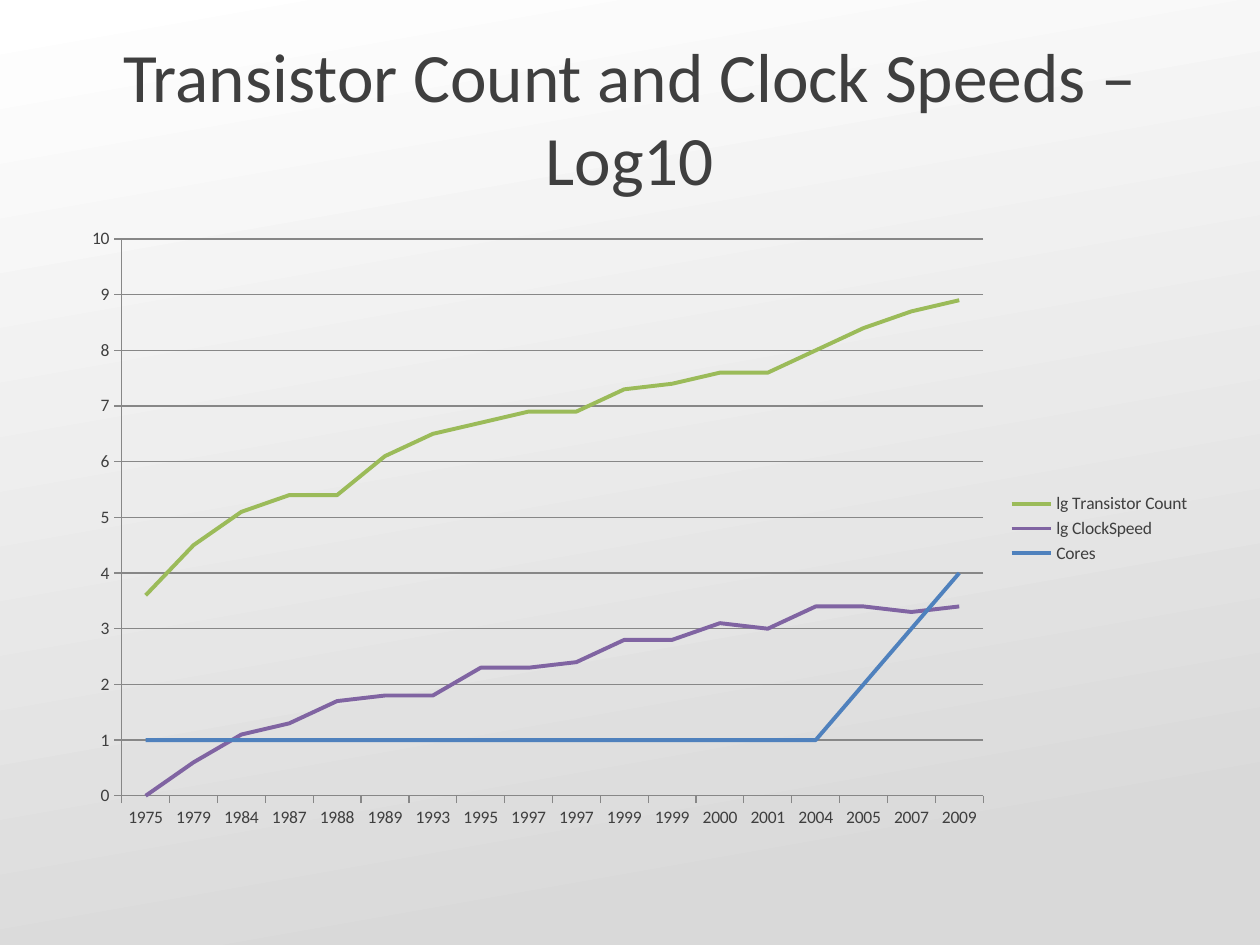
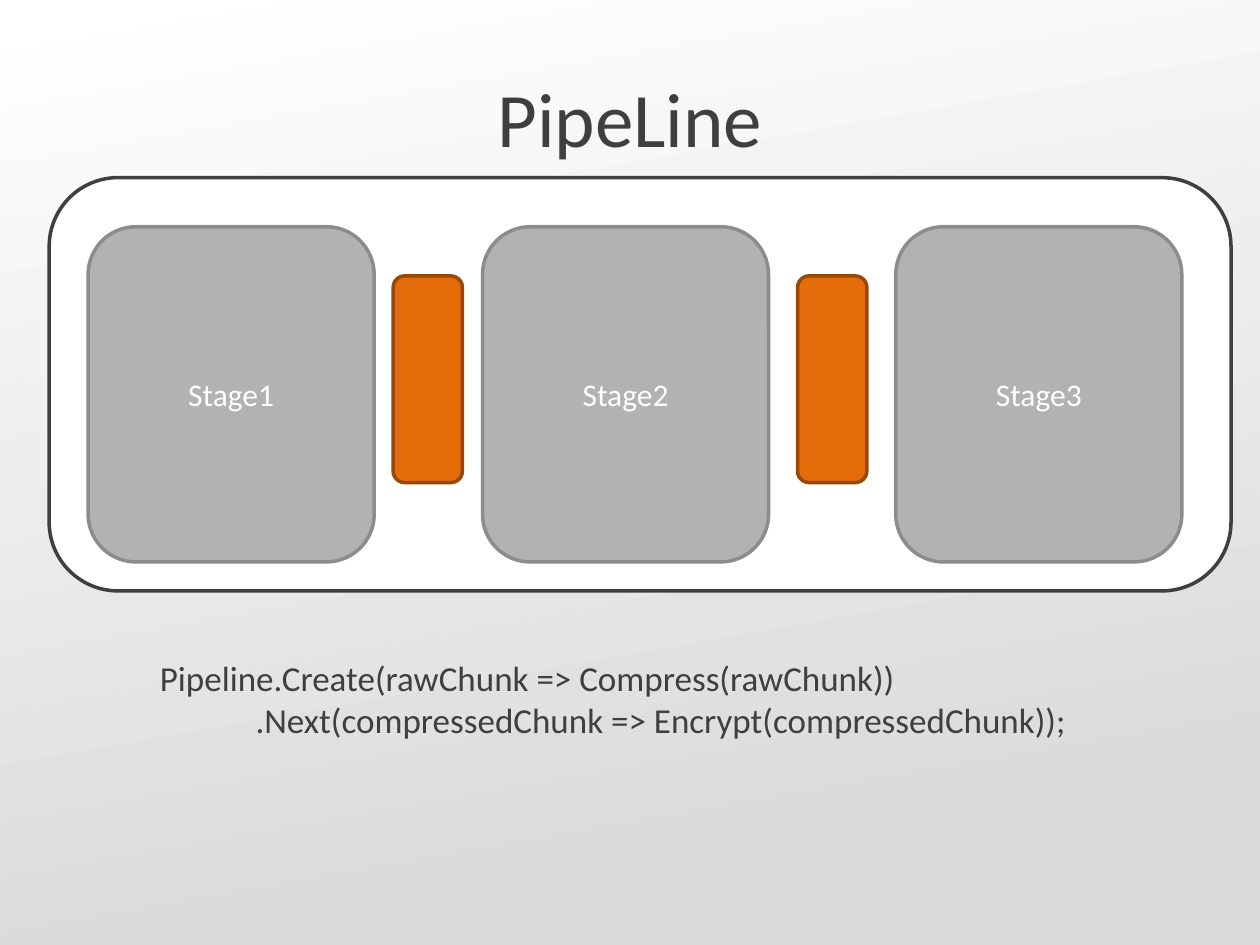
from pptx import Presentation
from pptx.chart.data import CategoryChartData
from pptx.dml.color import RGBColor
from pptx.enum.chart import XL_CHART_TYPE, XL_LEGEND_POSITION, XL_MARKER_STYLE, XL_TICK_MARK
from pptx.enum.shapes import MSO_SHAPE
from pptx.enum.text import MSO_ANCHOR, MSO_AUTO_SIZE, PP_ALIGN
from pptx.util import Inches, Pt

ROUNDED = MSO_SHAPE.ROUNDED_RECTANGLE
CENTER = PP_ALIGN.CENTER
MIDDLE = MSO_ANCHOR.MIDDLE
NO_AUTOFIT = MSO_AUTO_SIZE.NONE
LINE_CHART = XL_CHART_TYPE.LINE
NO_MARKER = XL_MARKER_STYLE.NONE
TICK_OUTSIDE = XL_TICK_MARK.OUTSIDE
LEGEND_RIGHT = XL_LEGEND_POSITION.RIGHT
TITLE_ONLY = 5
FONT = "Calibri"

COLORS = {name: RGBColor.from_string(value) for name, value in {
    "text": "3F3F3F",
    "white": "FFFFFF",
    "shade": "D9D9D9",
    "grid": "878787",
    "stage": "B2B2B2",
    "stage_line": "8C8C8C",
    "buffer": "E46C0A",
    "buffer_line": "984807",
    "transistors": "9BBB59",
    "clock": "8064A2",
    "cores": "4F81BD",
}.items()}


def format_font(font, size, color):
    font.name = FONT
    font.size = Pt(size)
    font.color.rgb = COLORS[color]


def add_box(slide, left, top, width, height, fill, line):
    """Add a flat rounded box with a 2 pt outline."""
    shape = slide.shapes.add_shape(
        ROUNDED, Inches(left), Inches(top), Inches(width), Inches(height))
    shape.shadow.inherit = False
    shape.fill.solid()
    shape.fill.fore_color.rgb = COLORS[fill]
    shape.line.color.rgb = COLORS[line]
    shape.line.width = Pt(2)
    return shape


presentation = Presentation()
presentation.slide_width = Inches(10)
presentation.slide_height = Inches(7.5)

# Shared background and title
slides = []
for title_text, title_size in (("Transistor Count and Clock Speeds – Log10", 39.6),
                               ("PipeLine", 44)):
    slide = presentation.slides.add_slide(presentation.slide_layouts[TITLE_ONLY])
    slides.append(slide)
    background = slide.background.fill
    background.gradient()
    background.gradient_angle = 100
    for stop, position, color in zip(background.gradient_stops, (0.11, 1), ("shade", "white")):
        stop.position = position
        stop.color.rgb = COLORS[color]

    title = slide.shapes.title
    title.left, title.top, title.width, title.height = map(Inches, (0.5, 0.3, 9, 1.25))
    text_frame = title.text_frame
    text_frame.text = title_text
    text_frame.word_wrap = True
    text_frame.auto_size = NO_AUTOFIT
    text_frame.vertical_anchor = MIDDLE
    paragraph = text_frame.paragraphs[0]
    paragraph.alignment = CENTER
    format_font(paragraph.runs[0].font, title_size, "text")

chart_slide, pipeline_slide = slides

# Slide 1: line chart
chart_data = CategoryChartData()
chart_data.categories = [
    "1975", "1979", "1984", "1987", "1988", "1989", "1993", "1995", "1997",
    "1997", "1999", "1999", "2000", "2001", "2004", "2005", "2007", "2009"]
chart_data.add_series("lg Transistor Count", [
    3.6, 4.5, 5.1, 5.4, 5.4, 6.1, 6.5, 6.7, 6.9, 6.9, 7.3, 7.4, 7.6, 7.6, 8, 8.4, 8.7, 8.9])
chart_data.add_series("lg ClockSpeed", [
    0, 0.6, 1.1, 1.3, 1.7, 1.8, 1.8, 2.3, 2.3, 2.4, 2.8, 2.8, 3.1, 3, 3.4, 3.4, 3.3, 3.4])
chart_data.add_series("Cores", [1] * 15 + [2, 3, 4])

chart = chart_slide.shapes.add_chart(
    LINE_CHART, Inches(0.55), Inches(1.72), Inches(9), Inches(4.95), chart_data).chart
format_font(chart.font, 10, "text")
chart.has_title = False
chart.has_legend = True
chart.legend.position = LEGEND_RIGHT
chart.legend.include_in_layout = False
chart.plots[0].vary_by_categories = False

for series, color in zip(chart.plots[0].series, ("transistors", "clock", "cores")):
    series.smooth = False
    series.marker.style = NO_MARKER
    series.format.line.color.rgb = COLORS[color]
    series.format.line.width = Pt(2.25)

value_axis = chart.value_axis
value_axis.minimum_scale = 0
value_axis.maximum_scale = 10
value_axis.major_unit = 1
value_axis.has_major_gridlines = True
for axis in (chart.category_axis, value_axis):
    axis.major_tick_mark = TICK_OUTSIDE
for element in (chart.category_axis, value_axis, value_axis.major_gridlines):
    element.format.line.color.rgb = COLORS["grid"]
    element.format.line.width = Pt(0.75)

# Slide 2: stages joined by buffers
add_box(pipeline_slide, 0.39, 1.41, 9.38, 3.28, "white", "text")

for number, left in enumerate((0.7, 3.83, 7.11), start=1):
    stage = add_box(pipeline_slide, left, 1.8, 2.27, 2.66, "stage", "stage_line")
    stage.text_frame.text = f"Stage{number}"
    stage.text_frame.vertical_anchor = MIDDLE
    paragraph = stage.text_frame.paragraphs[0]
    paragraph.alignment = CENTER
    format_font(paragraph.runs[0].font, 18, "white")

for left in (3.12, 6.33):
    add_box(pipeline_slide, left, 2.19, 0.55, 1.64, "buffer", "buffer_line")

code_box = pipeline_slide.shapes.add_textbox(
    Inches(1.17), Inches(5.16), Inches(8.05), Inches(0.77))
text_frame = code_box.text_frame
text_frame.word_wrap = True
text_frame.text = ("Pipeline.Create(rawChunk => Compress(rawChunk))\n"
                   ".Next(compressedChunk => Encrypt(compressedChunk));")
for paragraph in text_frame.paragraphs:
    format_font(paragraph.runs[0].font, 20, "text")
chained_call = text_frame.paragraphs[1]
chained_call._p.get_or_add_pPr().set("marL", str(Inches(0.76)))

presentation.save("out.pptx")
